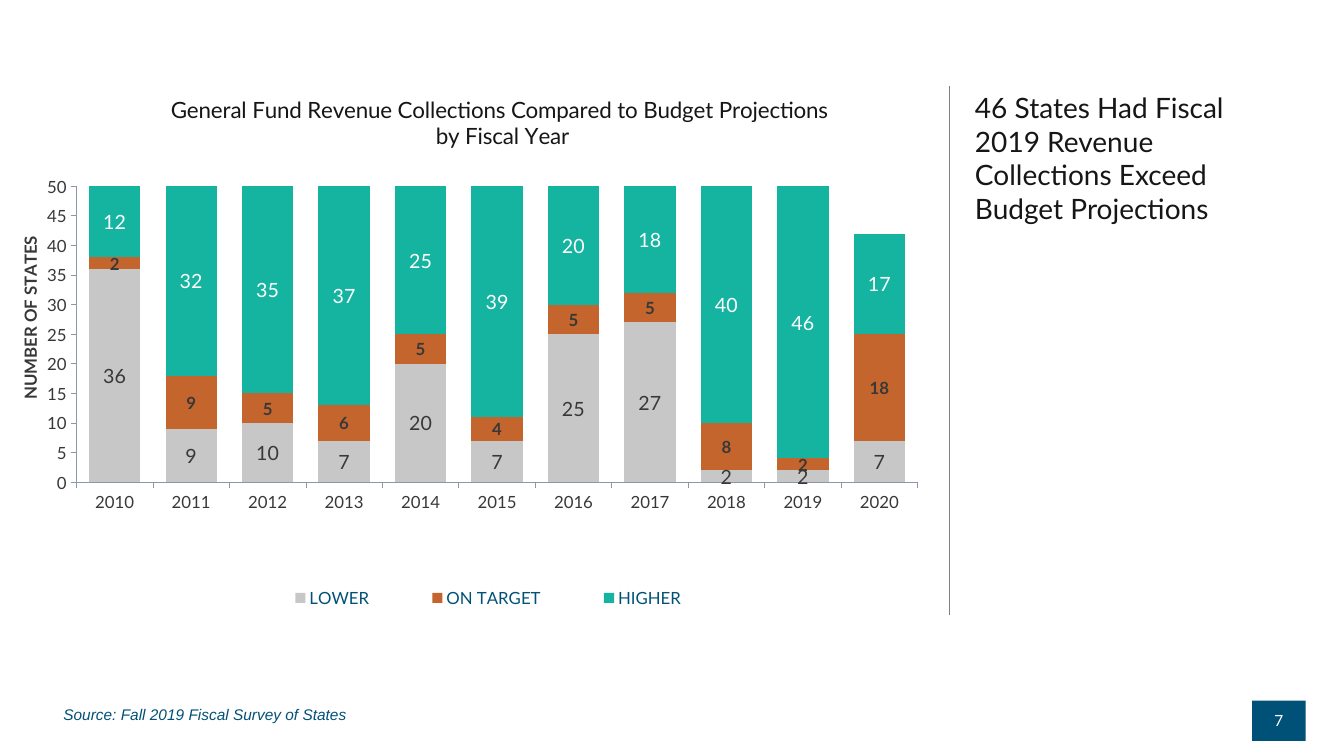
"""Build the slide on state revenue collections against budget projections."""
from lxml.etree import SubElement
from pptx import Presentation
from pptx.chart.data import CategoryChartData
from pptx.dml.color import RGBColor
from pptx.enum.chart import XL_CHART_TYPE, XL_LEGEND_POSITION, XL_TICK_MARK
from pptx.enum.shapes import MSO_CONNECTOR, MSO_SHAPE
from pptx.enum.text import MSO_ANCHOR, MSO_AUTO_SIZE, PP_ALIGN
from pptx.oxml import parse_xml
from pptx.oxml.ns import nsdecls, qn
from pptx.util import Inches, Pt

COLORS = {
    "navy": "005177", "ink": "161616", "text": "383838", "axis": "8C98A7",
    "divider": "808080", "white": "FFFFFF",
    "lower": "C7C7C7", "on_target": "C4652D", "higher": "14B4A1",
}
COLORS = {role: RGBColor.from_string(value) for role, value in COLORS.items()}


def style(font, size, color, **extra):
    values = {"name": "Lato", "size": Pt(size), "bold": False, **extra}
    for attribute, value in values.items():
        setattr(font, attribute, value)
    font.color.rgb = COLORS[color]


def place(element, **fractions):
    for old in element.findall(qn("c:layout")):
        element.remove(old)
    layout = parse_xml(f"<c:layout {nsdecls('c')}><c:manualLayout/></c:layout>")
    for tag, value in fractions.items():
        SubElement(layout[0], qn(f"c:{tag}")).set("val", str(value))
    overlay = element.find(qn("c:overlay"))
    if overlay is None:
        element.insert(0, layout)
    else:
        overlay.addprevious(layout)


presentation = Presentation()
presentation.slide_width = Inches(13.33)
presentation.slide_height = Inches(7.5)
slide = presentation.slides.add_slide(presentation.slide_layouts[5])

headline = slide.shapes.title
headline_box = {"left": 9.57, "top": 0.85, "width": 3.38, "height": 5.25}
for side, length in headline_box.items():
    setattr(headline, side, Inches(length))
headline_text = headline.text_frame
headline_text.text = "46 States Had Fiscal 2019 Revenue Collections Exceed Budget Projections"
headline_format = {"word_wrap": True, "auto_size": MSO_AUTO_SIZE.NONE,
                   "vertical_anchor": MSO_ANCHOR.TOP}
for attribute, value in headline_format.items():
    setattr(headline_text, attribute, value)
headline_text.paragraphs[0].alignment = PP_ALIGN.LEFT
style(headline_text.paragraphs[0].runs[0].font, 20, "ink")

divider = slide.shapes.add_connector(
    MSO_CONNECTOR.STRAIGHT, Inches(9.42), Inches(6.1), Inches(9.42), Inches(0.85))
divider.line.color.rgb = COLORS["divider"]
divider.line.width = Pt(0.5)
SubElement(divider._element.spPr, qn("a:effectLst"))

page_number = slide.shapes.add_shape(
    MSO_SHAPE.RECTANGLE, Inches(12.42), Inches(6.95), Inches(0.53), Inches(0.4))
page_number.shadow.inherit = False
page_number.fill.solid()
page_number.fill.fore_color.rgb = COLORS["navy"]
page_number.line.fill.background()
page_number.text_frame.text = "7"
page_number.text_frame.vertical_anchor = MSO_ANCHOR.MIDDLE
page_number.text_frame.paragraphs[0].alignment = PP_ALIGN.CENTER
style(page_number.text_frame.paragraphs[0].runs[0].font, 11, "white")

outcomes = [
    ("LOWER", "lower", (36, 9, 10, 7, 20, 7, 25, 27, 2, 2, 7), 14, "text", False),
    ("ON TARGET", "on_target", (2, 9, 5, 6, 5, 4, 5, 5, 8, 2, 18), 12, "text", True),
    ("HIGHER", "higher", (12, 32, 35, 37, 25, 39, 20, 18, 40, 46, 17), 14, "white", False),
]
revenue = CategoryChartData()
revenue.categories = [str(year) for year in range(2010, 2021)]
for outcome, _, counts, *_ in outcomes:
    revenue.add_series(outcome, counts)

chart = slide.shapes.add_chart(
    XL_CHART_TYPE.COLUMN_STACKED, Inches(0), Inches(0.85), Inches(9.25), Inches(5.31),
    revenue).chart
style(chart.font, 12, "navy")

chart.has_title = True
chart_title = chart.chart_title.text_frame
chart_title.text = "General Fund Revenue Collections Compared to Budget Projections \nby Fiscal Year"
for line in chart_title.paragraphs:
    style(line.runs[0].font, 16, "ink")
place(chart.chart_title._element, xMode="edge", yMode="edge", x=0.18, y=0.01)

columns = chart.plots[0]
for attribute, value in {"gap_width": 49, "overlap": 100, "vary_by_categories": False}.items():
    setattr(columns, attribute, value)
place(columns._element.getparent(), layoutTarget="inner", xMode="edge", yMode="edge",
      x=0.082, y=0.188, w=0.902, h=0.553)

for series, (_, fill, _, size, label_color, bold) in zip(columns.series, outcomes):
    series.format.fill.solid()
    series.format.fill.fore_color.rgb = COLORS[fill]
    series.data_labels.show_value = True
    style(series.data_labels.font, size, label_color, bold=bold)

for axis in (chart.category_axis, chart.value_axis):
    axis.has_major_gridlines = False
    axis.major_tick_mark = XL_TICK_MARK.OUTSIDE
    axis.format.line.color.rgb = COLORS["axis"]
    axis.format.line.width = Pt(0.5)
    style(axis.tick_labels.font, 12, "text")

states = chart.value_axis
for attribute, value in {"minimum_scale": 0, "maximum_scale": 50, "major_unit": 5}.items():
    setattr(states, attribute, value)
states.axis_title.text_frame.text = "NUMBER OF STATES"
style(states.axis_title.text_frame.paragraphs[0].runs[0].font, 12, "text", bold=True)
place(states.axis_title._element, xMode="edge", yMode="edge", x=0.016, y=0.275)

chart.has_legend = True
chart.legend.position = XL_LEGEND_POSITION.BOTTOM
chart.legend.include_in_layout = False
style(chart.legend.font, 12, "navy")
place(chart.legend._element, xMode="edge", yMode="edge", x=0.255, y=0.922, w=0.537, h=0.07)

source_note = slide.shapes.add_textbox(
    Inches(0.53), Inches(6.95), Inches(5.61), Inches(0.26)).text_frame
source_note.word_wrap = True
source_note.text = "Source: Fall 2019 Fiscal Survey of States"
style(source_note.paragraphs[0].runs[0].font, 11, "navy", name="Arial", italic=True)

presentation.save("out.pptx")
